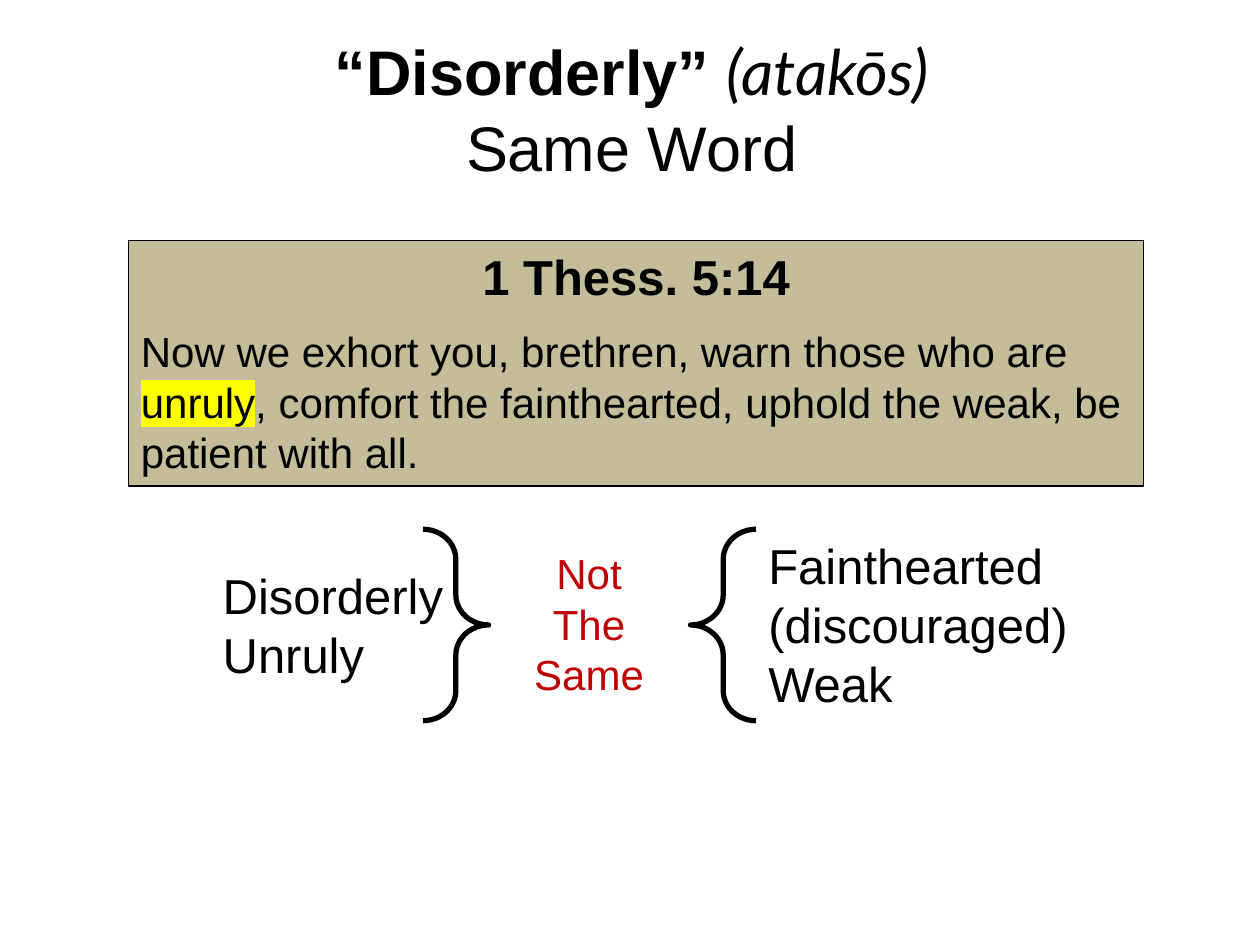
"""Build the slide contrasting "disorderly" with "fainthearted" in 1 Thess. 5:14."""
from lxml import etree
from pptx import Presentation
from pptx import util as u
from pptx.dml.color import RGBColor
from pptx.enum import shapes, text
from pptx.oxml.ns import qn

BLACK, RED, TAN, YELLOW = "000000", "C00000", "C5BD99", "FFFF00"
CENTER, LEFT = text.PP_ALIGN.CENTER, text.PP_ALIGN.LEFT

TITLE = [[("“Disorderly” ", {"bold": True}), ("(atakōs)", {"font": "Lato", "italic": True})],
         [("Same Word", {})]]
REFERENCE = [[("1 Thess. 5:14", {"bold": True})]]
VERSE = [[("Now we exhort you, brethren, warn those who are ", {}),
          ("unruly", {"highlight": YELLOW}),
          (", comfort the fainthearted, uphold the weak, be patient with all.", {})]]
WORD_GROUPS = [
    (("Disorderly", "Unruly"), (4.24, 11.28, 8.76, 2.64), {"size": 28}),
    (("Fainthearted (discouraged)", "Weak"), (15.24, 10.67, 10.16, 3.84), {"size": 28}),
    (("Not", "The", "Same"), (8.23, 10.92, 7.29, 3.33),
     {"size": 24, "color": RED, "align": CENTER}),
]
BRACES = [(shapes.MSO_SHAPE.RIGHT_BRACE, 8.53), (shapes.MSO_SHAPE.LEFT_BRACE, 13.92)]
BRACE_TOP, BRACE_WIDTH, BRACE_HEIGHT = 10.67, 1.32, 3.86


def rgb(value):
    return RGBColor.from_string(value)


def cm(*lengths):
    return [u.Cm(length) for length in lengths]


def add_run(paragraph, words, size, color=BLACK, font="Arial", bold=False, italic=False,
            highlight=None):
    run = paragraph.add_run()
    run.text = words
    run.font.size, run.font.name = u.Pt(size), font
    run.font.bold, run.font.italic = bold, italic
    run.font.color.rgb = rgb(color)
    if highlight:
        mark = etree.Element(qn("a:highlight"))
        etree.SubElement(mark, qn("a:srgbClr"), val=highlight)
        run.font._element.find(qn("a:solidFill")).addnext(mark)


def write(frame, lines, size, color=BLACK, align=LEFT, anchor=text.MSO_ANCHOR.TOP, before=0):
    frame.word_wrap, frame.auto_size = True, text.MSO_AUTO_SIZE.NONE
    frame.vertical_anchor = anchor
    for line in lines:
        first = frame.paragraphs[0]
        paragraph = frame.add_paragraph() if first.runs else first
        paragraph.alignment, paragraph.space_before = align, u.Pt(before)
        for words, look in line:
            add_run(paragraph, words, size, color, **look)


def add_outlined(slide, preset, box, width):
    outlined = slide.shapes.add_shape(preset, *cm(*box))
    outlined.shadow.inherit = False
    outlined.line.color.rgb, outlined.line.width = rgb(BLACK), u.Pt(width)
    return outlined


def main():
    deck = Presentation()
    deck.slide_width, deck.slide_height = cm(25.4, 19.05)
    slide = deck.slides.add_slide(deck.slide_layouts[5])

    title = slide.shapes.title
    title.left, title.top, title.width, title.height = cm(4.39, 0.53, 16.69, 3.33)
    write(title.text_frame, TITLE, 36, align=CENTER)

    passage = add_outlined(slide, shapes.MSO_SHAPE.RECTANGLE, (2.59, 4.85, 20.47, 4.95), 0.75)
    passage.fill.solid()
    passage.fill.fore_color.rgb = rgb(TAN)
    write(passage.text_frame, REFERENCE, 28, align=CENTER)
    write(passage.text_frame, VERSE, 24, before=11.5)

    for words, box, look in WORD_GROUPS:
        group = slide.shapes.add_textbox(*cm(*box))
        write(group.text_frame, [[(word, {})] for word in words], **look)

    for preset, left in BRACES:
        brace = add_outlined(slide, preset, (left, BRACE_TOP, BRACE_WIDTH, BRACE_HEIGHT), 3)
        brace.fill.background()
        brace.adjustments[0] = 0.46


    deck.save("out.pptx")


if __name__ == "__main__":
    main()
